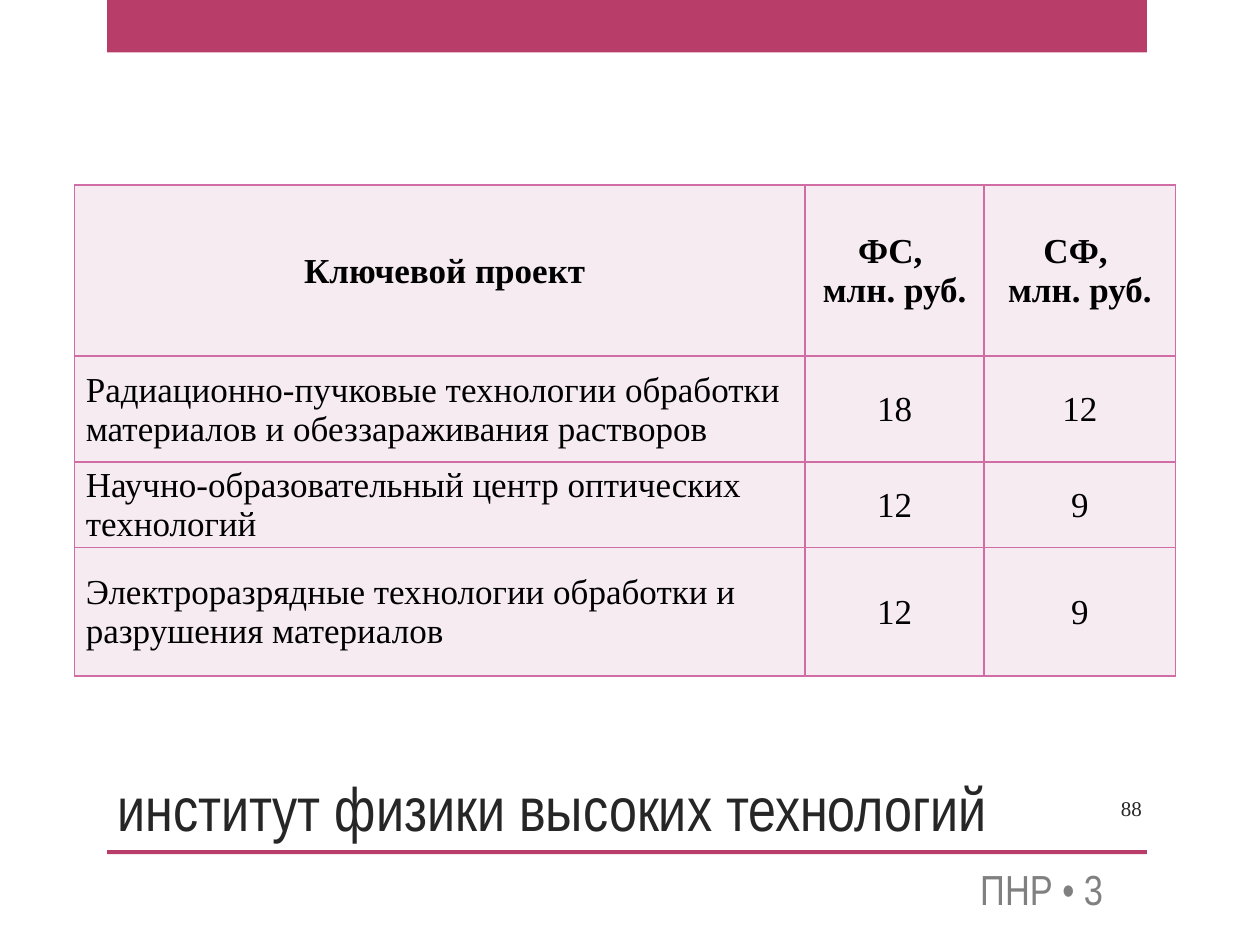
from dataclasses import dataclass

from lxml.etree import SubElement
from pptx import Presentation
from pptx.dml.color import RGBColor
from pptx.enum.shapes import MSO_SHAPE as Preset
from pptx.enum.text import MSO_ANCHOR as Anchor, MSO_AUTO_SIZE as AutoSize, PP_ALIGN as Align
from pptx.oxml.ns import qn
from pptx.util import Cm, Pt


@dataclass(frozen=True)
class Theme:
    accent: str = "B83D68"
    border: str = "CF6DA4"
    cell: str = "F6EBF0"
    dark: str = "262626"
    grey: str = "808080"
    black: str = "000000"
    heading_font: str = "Arial Narrow"
    text_font: str = "Times New Roman"
    title_size: int = 35
    label_size: int = 24
    table_size: int = 20
    number_size: int = 12


THEME = Theme()
BAND_LEFT, BAND_WIDTH = 2.16, 20.96

HEADER = ["Ключевой проект", "ФС, \nмлн. руб.", "СФ, \nмлн. руб."]
PROJECTS = [
    ["Радиационно-пучковые технологии обработки материалов и обеззараживания растворов", "18", "12"],
    ["Научно-образовательный центр оптических технологий", "12", "9"],
    ["Электроразрядные технологии обработки и разрушения материалов", "12", "9"],
]
COLUMN_WIDTHS = [14.73, 3.61, 3.86]
ROW_HEIGHTS = [3.45, 2.13, 1.6, 2.59]


def write(frame, text, font, size, color, align=Align.LEFT, anchor=Anchor.MIDDLE, bold=False):
    frame.text = text
    frame.word_wrap = True
    frame.vertical_anchor = anchor
    for paragraph in frame.paragraphs:
        paragraph.alignment = align
        paragraph.font.name = font
        paragraph.font.size = Pt(size)
        paragraph.font.bold = bold
        paragraph.font.color.rgb = RGBColor.from_string(color)


def add_band(slide, left, top, width, height):
    shape = slide.shapes.add_shape(Preset.RECTANGLE, Cm(left), Cm(top), Cm(width), Cm(height))
    shape.shadow.inherit = False
    shape.fill.solid()
    shape.fill.fore_color.rgb = RGBColor.from_string(THEME.accent)
    shape.line.fill.background()


def add_text(slide, left, top, width, height, *style):
    box = slide.shapes.add_textbox(Cm(left), Cm(top), Cm(width), Cm(height))
    write(box.text_frame, *style)


def set_borders(cell):
    properties = cell._tc.get_or_add_tcPr()
    for position, side in enumerate(("lnL", "lnR", "lnT", "lnB")):
        line = SubElement(properties, qn(f"a:{side}"), w=str(Pt(1)))
        fill = SubElement(line, qn("a:solidFill"))
        SubElement(fill, qn("a:srgbClr"), val=THEME.border)
        # Borders come before the cell fill in the schema
        properties.insert(position, line)


def add_project_table(slide, left, top):
    rows = [HEADER, *PROJECTS]
    table = slide.shapes.add_table(
        len(rows), len(HEADER), Cm(left), Cm(top), Cm(sum(COLUMN_WIDTHS)), Cm(sum(ROW_HEIGHTS))
    ).table
    for column, width in zip(table.columns, COLUMN_WIDTHS):
        column.width = Cm(width)
    for row, height in zip(table.rows, ROW_HEIGHTS):
        row.height = Cm(height)

    for row_index, texts in enumerate(rows):
        for column_index, text in enumerate(texts):
            cell = table.cell(row_index, column_index)
            is_header, is_name = row_index == 0, column_index == 0
            align = Align.LEFT if is_name and not is_header else Align.CENTER
            write(cell.text_frame, text, THEME.text_font, THEME.table_size, THEME.black,
                  align, bold=is_header)
            cell.vertical_anchor = Anchor.MIDDLE
            cell.margin_left = Cm(0.23 if is_name else 0.03)
            cell.margin_right = cell.margin_top = Cm(0.03)
            cell.margin_bottom = Cm(0)
            cell.fill.solid()
            cell.fill.fore_color.rgb = RGBColor.from_string(THEME.cell)
            set_borders(cell)


def add_footer(slide, left, top):
    # Title above the rule
    title = slide.shapes.title
    title.left, title.top, title.width, title.height = Cm(left), Cm(top), Cm(22), Cm(2.21)
    write(title.text_frame, "институт физики высоких технологий", THEME.heading_font,
          THEME.title_size, THEME.dark, Align.LEFT, Anchor.BOTTOM)
    title.text_frame.auto_size = AutoSize.NONE

    # Page number and section label
    add_text(slide, left + 19.05, top + 0.86, 2.11, 1.02, "88", THEME.text_font,
             THEME.number_size, THEME.dark, Align.RIGHT)
    add_text(slide, left + 17.4, top + 2.36, 3.61, 1.24, "ПНР • 3", THEME.heading_font,
             THEME.label_size, THEME.grey)


def main():
    presentation = Presentation()
    presentation.slide_width, presentation.slide_height = Cm(25.4), Cm(19.05)
    slide = presentation.slides.add_slide(presentation.slide_layouts[5])

    # Top band and footer rule
    add_band(slide, BAND_LEFT, 0, BAND_WIDTH, 1.06)
    add_band(slide, BAND_LEFT, 17.14, BAND_WIDTH, 0.08)
    add_footer(slide, 2.11, 14.93)
    add_project_table(slide, 1.5, 3.73)
    presentation.save("out.pptx")


if __name__ == "__main__":
    main()
